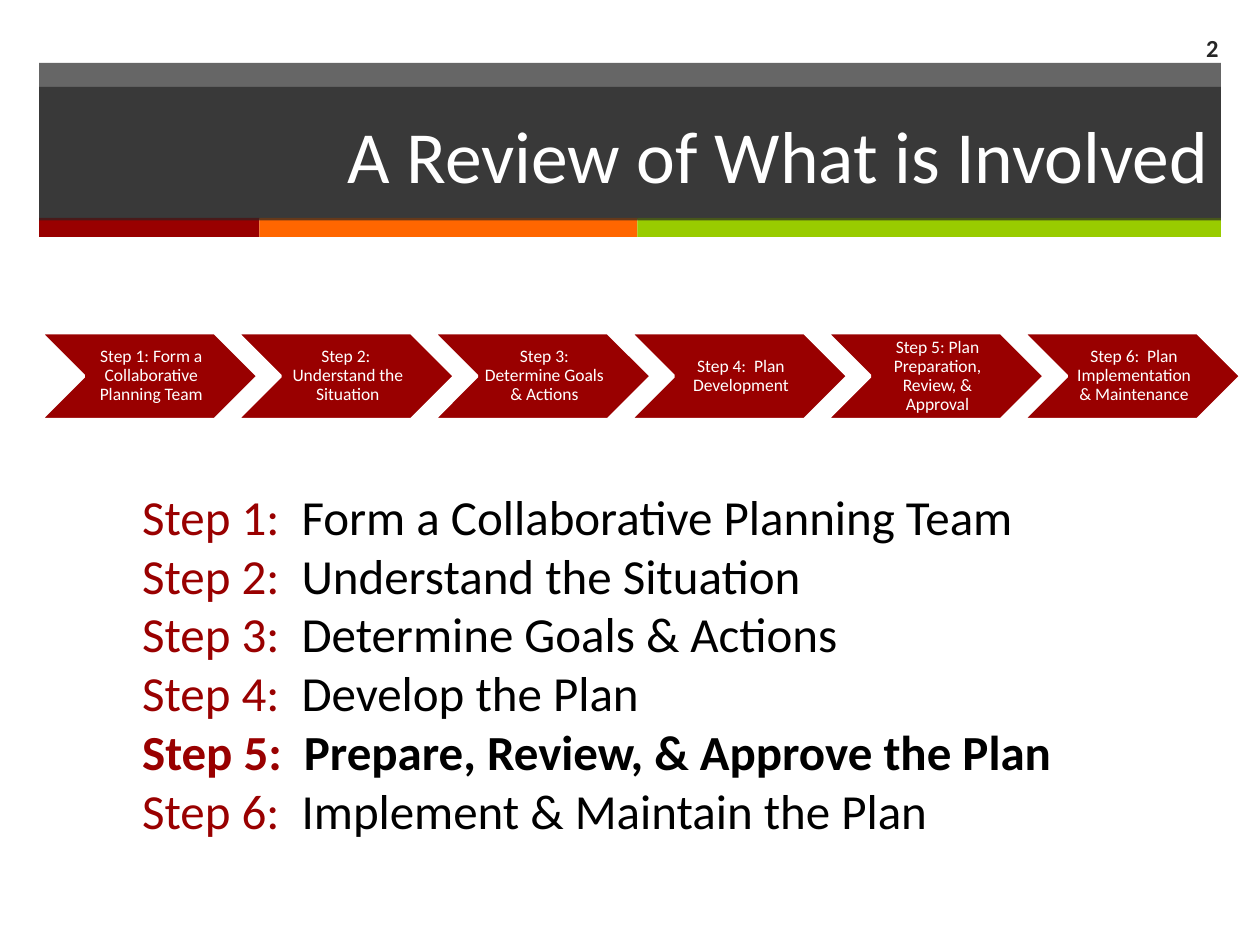
"""Build a slide reviewing the six steps of a planning process."""
from lxml import etree
from pptx import Presentation
from pptx.dml.color import RGBColor
from pptx.enum.shapes import MSO_SHAPE
from pptx.enum.text import MSO_ANCHOR, PP_ALIGN
from pptx.oxml.ns import qn
from pptx.util import Inches, Pt

RECTANGLE, CHEVRON = MSO_SHAPE.RECTANGLE, MSO_SHAPE.CHEVRON
MIDDLE, TOP = MSO_ANCHOR.MIDDLE, MSO_ANCHOR.TOP
LEFT, CENTER, RIGHT = PP_ALIGN.LEFT, PP_ALIGN.CENTER, PP_ALIGN.RIGHT
WHITE = RGBColor(0xFF, 0xFF, 0xFF)
BLACK = RGBColor(0, 0, 0)
CHARCOAL = RGBColor(0x26, 0x26, 0x26)
RED = RGBColor(0x99, 0, 0)
ORANGE = RGBColor(0xFF, 0x66, 0)
GREEN = RGBColor(0x99, 0xCC, 0)
FONT = "Calibri"

prs = Presentation()
prs.slide_width, prs.slide_height = Inches(10), Inches(7.5)
slide = prs.slides.add_slide(prs.slide_layouts[6])


def add_block(preset, left, top, width, height, color, opacity=100):
    block = slide.shapes.add_shape(
        preset, Inches(left), Inches(top), Inches(width), Inches(height))
    block.shadow.inherit = False
    block.fill.solid()
    block.fill.fore_color.rgb = color
    block.line.fill.background()
    if opacity < 100:
        tint = block.fill._xPr.find(".//" + qn("a:srgbClr"))
        etree.SubElement(tint, qn("a:alpha"), val=str(opacity * 1000))
    return block


def write(frame, text, size, color, align, anchor=MIDDLE, bold=False):
    frame.word_wrap = True
    frame.vertical_anchor = anchor
    paragraph = frame.paragraphs[0]
    paragraph.text = text
    paragraph.alignment = align
    paragraph.font.name = FONT
    paragraph.font.size = Pt(size)
    paragraph.font.bold = bold
    paragraph.font.color.rgb = color
    return paragraph


margin, banner_width = 0.31, 9.38
add_block(RECTANGLE, margin, 0.5, banner_width, 1.24, CHARCOAL, 70)
stripe_left = margin
for stripe_width, stripe_color in ((1.75, RED), (3, ORANGE), (4.63, GREEN)):
    add_block(RECTANGLE, stripe_left, 1.73, stripe_width, 0.15, stripe_color)
    stripe_left += stripe_width
title = add_block(RECTANGLE, margin, 0.69, banner_width, 1.06, CHARCOAL, 70)
write(title.text_frame, "A Review of What is Involved", 42, WHITE, RIGHT)

chevron_labels = (
    "Step 1: Form a Collaborative Planning Team",
    "Step 2:  Understand the Situation",
    "Step 3: Determine Goals & Actions",
    "Step 4:  Plan Development",
    "Step 5: Plan Preparation, Review, & Approval",
    "Step 6:  Plan Implementation & Maintenance",
)
chevron_top, chevron_width, chevron_height = 2.64, 1.73, 0.69
chevron_pitch, label_indent = 1.56, chevron_height / 2
label_width = chevron_width - 2 * label_indent
for column, label in enumerate(chevron_labels):
    chevron_left = 0.32 + column * chevron_pitch
    chevron = add_block(
        CHEVRON, chevron_left, chevron_top, chevron_width, chevron_height, RED)
    chevron.line.color.rgb = WHITE
    chevron.line.width = Pt(2)
    caption = slide.shapes.add_textbox(
        Inches(chevron_left + label_indent), Inches(chevron_top),
        Inches(label_width), Inches(chevron_height)).text_frame
    caption.margin_left = Inches(0.04)
    caption.margin_top = caption.margin_right = caption.margin_bottom = Inches(0.01)
    write(caption, label, 10, WHITE, CENTER).line_spacing = 0.9

steps = (
    "Form a Collaborative Planning Team",
    "Understand the Situation",
    "Determine Goals & Actions",
    "Develop the Plan",
    "Prepare, Review, & Approve the Plan",
    "Implement & Maintain the Plan",
)
current_step = 5
step_list = slide.shapes.add_textbox(
    Inches(1.03), Inches(3.81), Inches(8.3), Inches(2.93)).text_frame
step_list.word_wrap = True
step_list.vertical_anchor = TOP
for number, step in enumerate(steps, 1):
    line = step_list.paragraphs[0] if number == 1 else step_list.add_paragraph()
    line.alignment = LEFT
    line.font.name = FONT
    line.font.size = Pt(28)
    line.font.bold = number == current_step
    for part, color in ((f"Step {number}:  ", RED), (step, BLACK)):
        run = line.add_run()
        run.text = part
        run.font.color.rgb = color

page_number = slide.shapes.add_textbox(
    Inches(9.08), Inches(0.18), Inches(0.69), Inches(0.39)).text_frame
write(page_number, "2", 14, CHARCOAL, RIGHT, bold=True)

prs.save("out.pptx")
